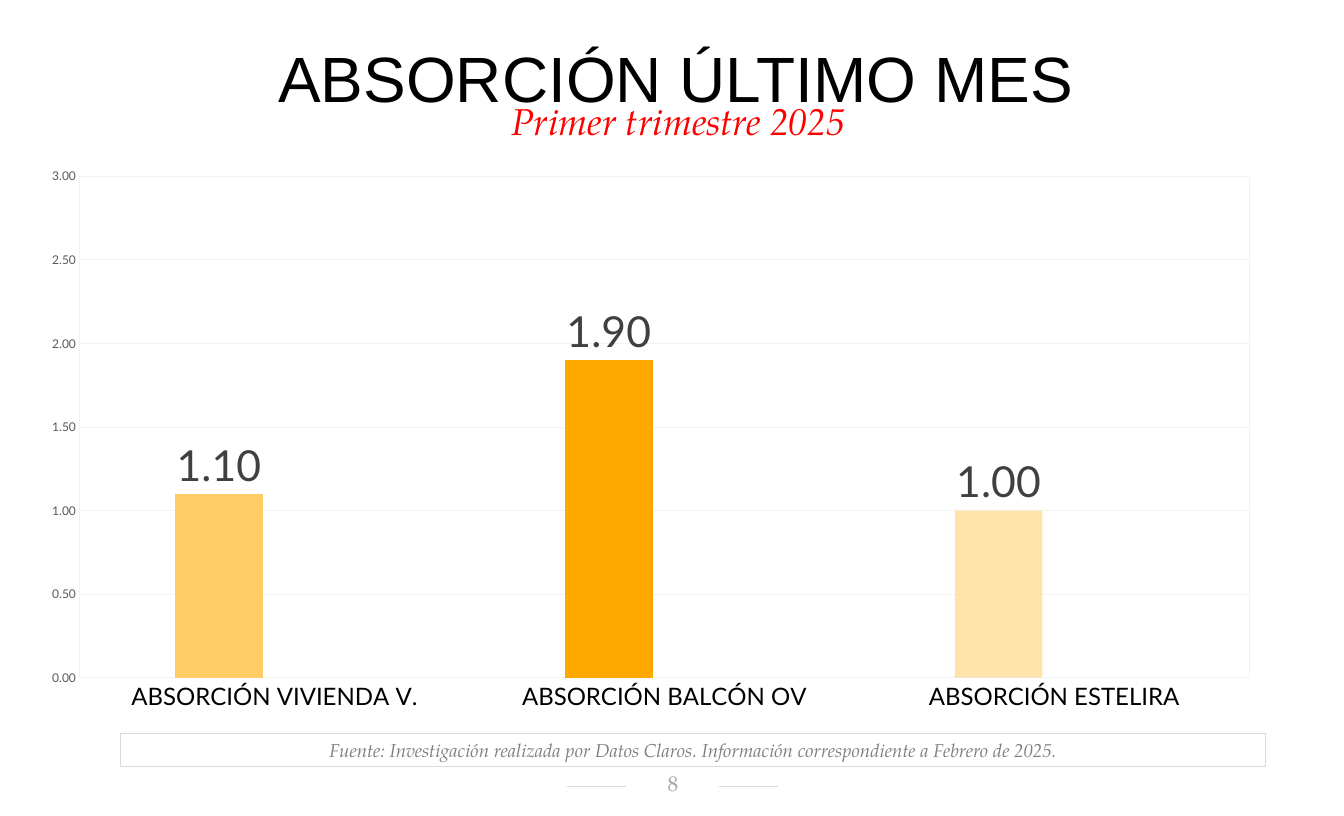
import pptx
import pptx.chart.data
import pptx.dml.color
import pptx.enum.chart
import pptx.enum.shapes
import pptx.enum.text
import pptx.oxml
import pptx.oxml.ns
import pptx.util

EMU_PER_PX = 9525
SERIF = "TeX Gyre Pagella"
SANS = "Lato"
GRID, RULE = "F2F2F2", "D9D9D9"


def px(length):
    return pptx.util.Emu(length * EMU_PER_PX)


def rgb(hex_string):
    return pptx.dml.color.RGBColor.from_string(hex_string)


def chart_xml(content):
    namespaces = pptx.oxml.ns.nsdecls("c", "a")
    tag, rest = content[1:].split(">", 1)
    return pptx.oxml.parse_xml(f"<{tag} {namespaces}>{rest}")


def set_font(font, face, size, color, italic=None):
    font.name = face
    font.size = pptx.util.Pt(size)
    font.italic = italic
    font.color.rgb = rgb(color)


def set_line(line, color, width=0.75):
    line.color.rgb = rgb(color)
    line.width = pptx.util.Pt(width)


def set_fill(fill, color, opacity=100):
    fill.solid()
    fill.fore_color.rgb = rgb(color)
    if opacity < 100:
        node = fill._xPr.find(".//" + pptx.oxml.ns.qn("a:srgbClr"))
        alpha = node.makeelement(pptx.oxml.ns.qn("a:alpha"), {"val": str(opacity * 1000)})
        node.append(alpha)


class Slide:
    """Holds the page and draws each kind of element on it."""

    def __init__(self, deck):
        self.page = deck.slides.add_slide(deck.slide_layouts[6])

    def rule(self, left, right, y):
        connector = self.page.shapes.add_connector(
            pptx.enum.shapes.MSO_CONNECTOR.STRAIGHT, px(left), px(y), px(right), px(y))
        set_line(connector.line, RULE, 0.5)
        properties = connector._element.spPr
        properties.append(properties.makeelement(pptx.oxml.ns.qn("a:effectLst"), {}))

    def text(self, area, words, face, size, color, italic=None, insets=(10, 5, 10, 5),
             middle=False, grow=True, border=None):
        """Add centred text and return its paragraph; a border makes it a rectangle."""
        place = [px(length) for length in area]
        if border:
            box = self.page.shapes.add_shape(pptx.enum.shapes.MSO_SHAPE.RECTANGLE, *place)
            box.shadow.inherit = False
            box.fill.background()
            set_line(box.line, border)
        else:
            box = self.page.shapes.add_textbox(*place)
        frame = box.text_frame
        frame.word_wrap = True
        frame.margin_left, frame.margin_top, frame.margin_right, frame.margin_bottom = map(px, insets)
        anchors = pptx.enum.text.MSO_ANCHOR
        frame.vertical_anchor = anchors.MIDDLE if middle else anchors.TOP
        if grow:
            frame.auto_size = pptx.enum.text.MSO_AUTO_SIZE.SHAPE_TO_FIT_TEXT
        para = frame.paragraphs[0]
        para.alignment = pptx.enum.text.PP_ALIGN.CENTER
        span = para.add_run()
        span.text = words
        set_font(span.font, face, size, color, italic)
        return para

    def columns(self, area, categories, values, point_fills):
        data = pptx.chart.data.CategoryChartData(number_format="0.00")
        data.categories = categories
        data.add_series("Series 1", values)
        data.add_series("Series 2", [None] * len(values))
        chart = self.page.shapes.add_chart(
            pptx.enum.chart.XL_CHART_TYPE.COLUMN_CLUSTERED,
            *[px(length) for length in area], data).chart
        chart.has_legend = False
        chart.has_title = False
        set_font(chart.font, SANS, 10, "000000")

        plot = chart.plots[0]
        plot.vary_by_categories = False
        plot.gap_width, plot.overlap = 219, -27
        for series, color, size in zip(plot.series, ("FFA900", "725990"), (32, 9)):
            set_fill(series.format.fill, color)
            labels = series.data_labels
            labels.show_value = True
            labels.position = pptx.enum.chart.XL_LABEL_POSITION.OUTSIDE_END
            labels.number_format, labels.number_format_is_linked = "0.00", False
            set_font(labels.font, SANS, size, "404040")
        for index, (color, opacity) in enumerate(point_fills):
            set_fill(plot.series[0].points[index].format.fill, color, opacity)

        axes = ((chart.category_axis, 18, "000000"), (chart.value_axis, 9, "595959"))
        for axis, size, color in axes:
            axis.major_tick_mark = axis.minor_tick_mark = pptx.enum.chart.XL_TICK_MARK.NONE
            set_font(axis.tick_labels.font, SANS, size, color)
            set_line(axis.format.line, GRID)
        value_axis = chart.value_axis
        value_axis.minimum_scale, value_axis.maximum_scale, value_axis.major_unit = 0, 3, 0.5
        value_axis.tick_labels.number_format = "0.00"
        value_axis.tick_labels.number_format_is_linked = False
        value_axis.has_major_gridlines = True
        set_line(value_axis.major_gridlines.format.line, GRID)
        self.frame_plot(chart, x=0.037, y=0.13, w=0.908, h=0.801)

    def frame_plot(self, chart, **fractions):
        """Fix the inner plot area and outline it."""
        area = chart._chartSpace.chart.plotArea
        for layout in area.findall(pptx.oxml.ns.qn("c:layout")):
            area.remove(layout)
        modes = "".join(f'<c:{side}Mode val="edge"/>' for side in "xy")
        sizes = "".join(f'<c:{side} val="{part}"/>' for side, part in fractions.items())
        area.insert(0, chart_xml(
            f'<c:layout><c:manualLayout><c:layoutTarget val="inner"/>{modes}{sizes}'
            "</c:manualLayout></c:layout>"))
        area.append(chart_xml(
            f'<c:spPr><a:noFill/><a:ln w="{EMU_PER_PX}"><a:solidFill><a:srgbClr val="{GRID}"/>'
            "</a:solidFill></a:ln></c:spPr>"))


def main():
    deck = pptx.Presentation()
    deck.slide_width, deck.slide_height = px(1344), px(816)
    slide = Slide(deck)

    for left, right in ((567, 626), (719, 778)):
        slide.rule(left, right, 786)
    slide.columns(
        (32, 95, 1288, 626),
        ["ABSORCIÓN VIVIENDA V.", "ABSORCIÓN BALCÓN OV", "ABSORCIÓN ESTELIRA"],
        [1.1, 1.9, 1],
        [("FFCC65", 100), ("FFA900", 100), ("FFDE9B", 83)])
    slide.text((625, 772, 94, 25), "8", SERIF, 16, "A6A6A6",
               insets=(12, 2, 10, 5), middle=True, grow=False)
    title = slide.text((6, 52, 1340, 67), "ABSORCIÓN ÚLTIMO MES", "Arial", 48, "000000",
                       insets=(12, 7, 12, 7))
    title.line_spacing = 0.7
    subtitle = slide.text((5, 93, 1344, 55), "Primer trimestre 2025", SERIF, 28, "FF0000", italic=True)
    subtitle.space_after = pptx.util.Pt(4)
    indents = subtitle._p.get_or_add_pPr()
    indents.set("marL", str(px(76)))
    indents.set("indent", str(px(-74)))
    slide.text((121, 734, 1145, 33),
               "Fuente: Investigación realizada por Datos Claros. "
               "Información correspondiente a Febrero de 2025.",
               SERIF, 14, "808080", italic=True, middle=True, border=RULE)
    deck.save("out.pptx")


if __name__ == "__main__":
    main()
